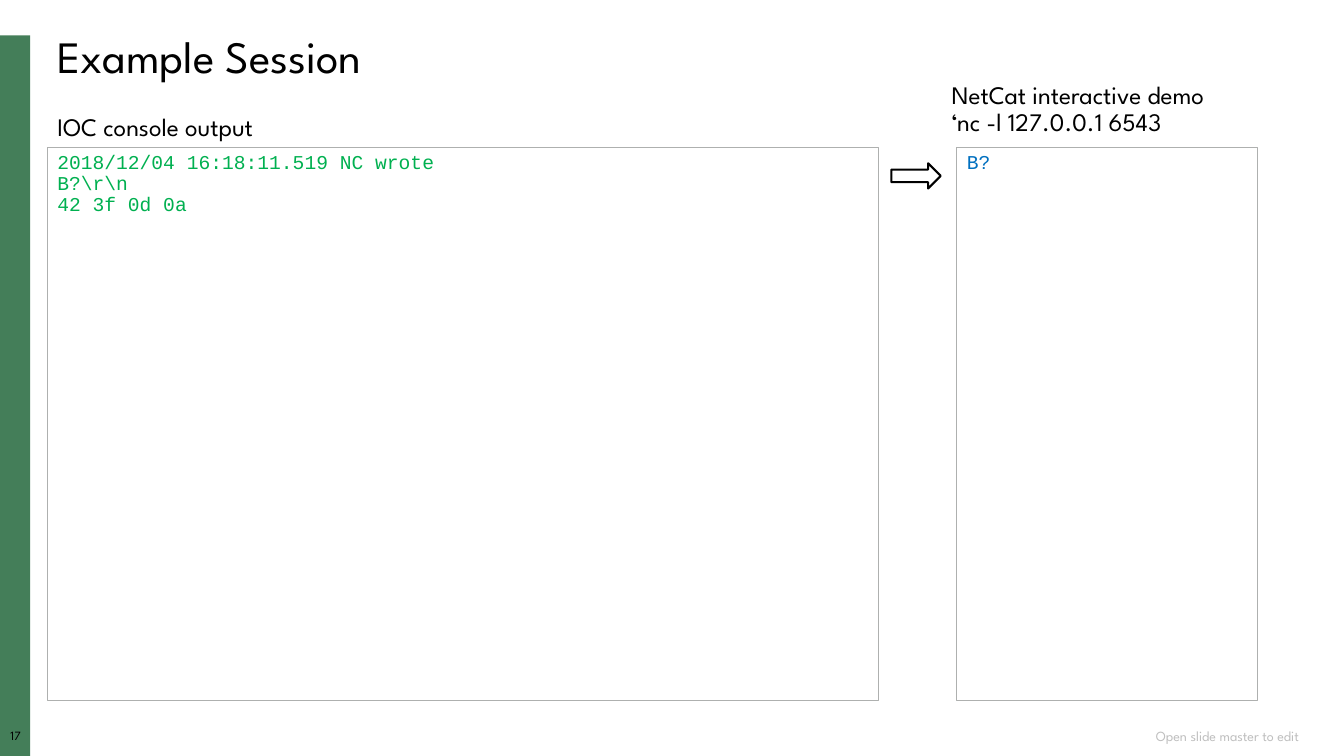
from dataclasses import dataclass

from pptx import Presentation
from pptx.dml.color import RGBColor
from pptx.enum.shapes import MSO_SHAPE
from pptx.enum.text import MSO_ANCHOR, PP_ALIGN
from pptx.util import Pt

EMU_PER_PX = 9144


@dataclass(frozen=True)
class Theme:
    """Colours, fonts and type sizes of the slide."""
    black: str = "000000"
    green: str = "447E59"
    grey: str = "BFBFBF"
    border: str = "AEB0AF"
    sent: str = "00B050"
    received: str = "0070C0"
    sans: str = "League Spartan"
    mono: str = "Courier New"
    title: int = 32
    label: int = 18
    code: int = 14
    footer: int = 10
    number: int = 9


def px(*lengths):
    """Turn px lengths into EMU."""
    return [length * EMU_PER_PX for length in lengths]


def write(frame, text, *, size, font, color, align=PP_ALIGN.LEFT,
          anchor=MSO_ANCHOR.TOP, wrap=True, inset=None, spacing=0.9):
    """Fill a text frame with one paragraph for each line of text."""
    frame.word_wrap = wrap
    frame.vertical_anchor = anchor
    if inset is not None:
        frame.margin_left = frame.margin_right = inset
        frame.margin_top = frame.margin_bottom = inset
    for index, line in enumerate(text.split("\n")):
        paragraph = frame.add_paragraph() if index else frame.paragraphs[0]
        paragraph.alignment = align
        paragraph.line_spacing = spacing
        run = paragraph.add_run()
        run.text = line
        run.font.size = Pt(size)
        run.font.name = font
        run.font.color.rgb = RGBColor.from_string(color)


class SlideBuilder:
    """Places styled elements on the current slide."""

    def __init__(self, slide, theme):
        self.slide = slide
        self.theme = theme

    def text(self, box, text, size, color=None, **text_format):
        """Add a text box in the sans font."""
        shape = self.slide.shapes.add_textbox(*px(*box))
        write(shape.text_frame, text, size=size, font=self.theme.sans,
              color=color or self.theme.black, **text_format)

    def shape(self, kind, box, fill=None, line=None, width=0.75):
        """Add a preset shape with an optional fill and outline."""
        shape = self.slide.shapes.add_shape(kind, *px(*box))
        shape.shadow.inherit = False
        if fill:
            shape.fill.solid()
            shape.fill.fore_color.rgb = RGBColor.from_string(fill)
        else:
            shape.fill.background()
        if line:
            shape.line.color.rgb = RGBColor.from_string(line)
            shape.line.width = Pt(width)
        else:
            shape.line.fill.background()
        return shape

    def console(self, box, text, color):
        """Add an outlined panel of monospaced text."""
        panel = self.shape(MSO_SHAPE.RECTANGLE, box, line=self.theme.border)
        write(panel.text_frame, text, size=self.theme.code,
              font=self.theme.mono, color=color)


def main():
    """Build and save the slide."""
    presentation = Presentation()
    presentation.slide_width, presentation.slide_height = px(1333, 750)
    slide = presentation.slides.add_slide(presentation.slide_layouts[6])
    theme = Theme()
    builder = SlideBuilder(slide, theme)

    builder.shape(MSO_SHAPE.RECTANGLE, (0, 35, 30, 715), fill=theme.green)
    builder.text((0, 724, 31, 17), "17", theme.number,
                 align=PP_ALIGN.CENTER, inset=0)
    builder.text((876, 720, 422, 20), "Open slide master to edit", theme.footer,
                 theme.grey, align=PP_ALIGN.RIGHT, anchor=MSO_ANCHOR.MIDDLE,
                 spacing=1.0)
    builder.text((47, 30, 1250, 59), "Example Session", theme.title)

    builder.console((949, 146, 298, 549), "B?", theme.received)
    builder.console((47, 146, 824, 549),
                    "2018/12/04 16:18:11.519 NC wrote\nB?\\r\\n\n42 3f 0d 0a",
                    theme.sent)
    builder.text((47, 109, 260, 37), "IOC console output", theme.label, wrap=False)
    builder.text((934, 77, 329, 65),
                 "NetCat interactive demo\n‘nc -l 127.0.0.1 6543",
                 theme.label, wrap=False)
    builder.shape(MSO_SHAPE.RIGHT_ARROW, (884, 162, 49, 25),
                  line=theme.black, width=1.5)

    presentation.save("out.pptx")


if __name__ == "__main__":
    main()
